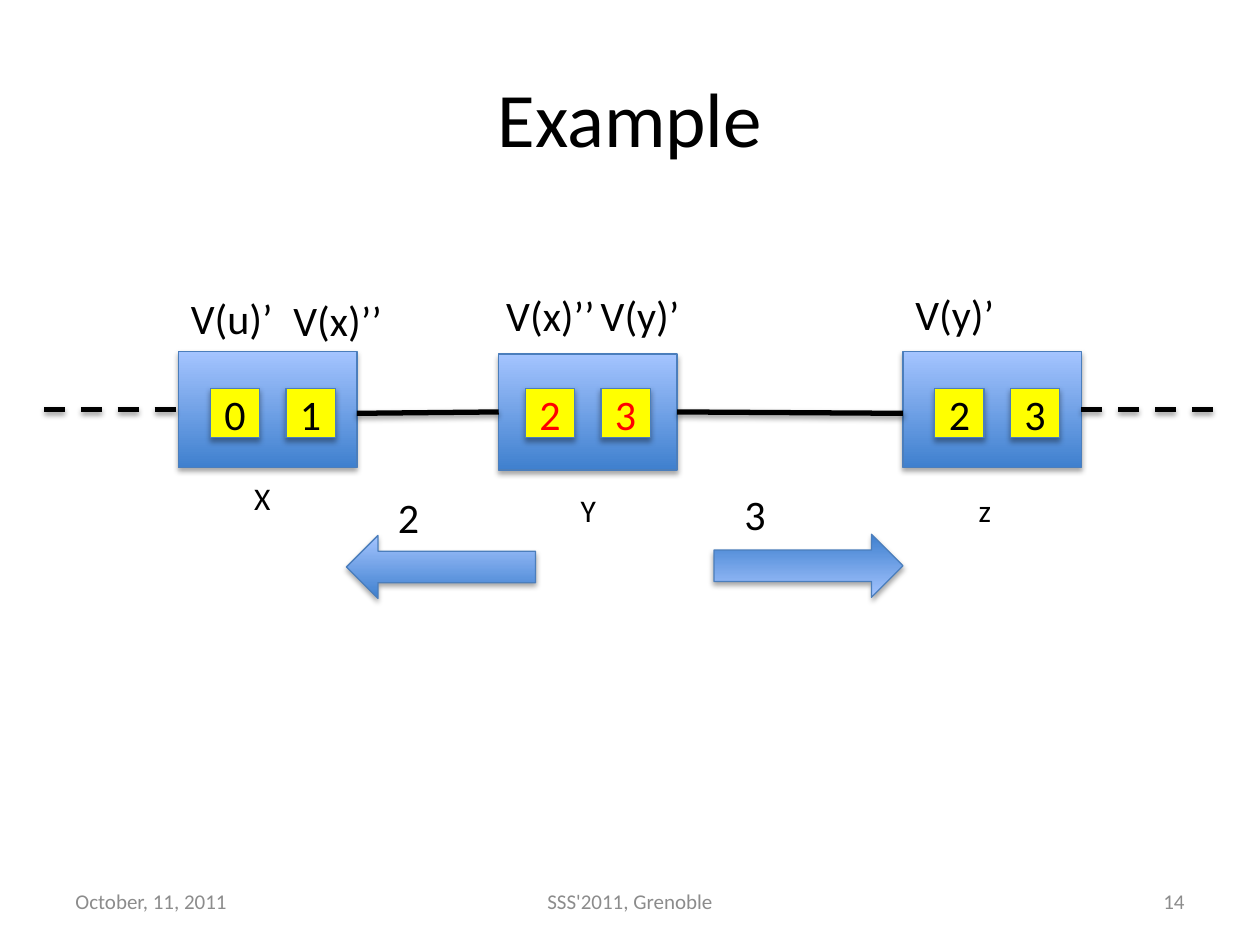
import dataclasses

import pptx
import pptx.dml.color
import pptx.enum.dml
import pptx.enum.shapes
import pptx.enum.text
import pptx.oxml.xmlchemy
import pptx.util

Pt = pptx.util.Pt
ALIGN = pptx.enum.text.PP_ALIGN
ANCHOR = pptx.enum.text.MSO_ANCHOR
KIND = pptx.enum.shapes.MSO_SHAPE
FONT = "Calibri"
BLACK, RED, GREY = "000000", "FF0000", "8C8C8C"
YELLOW, EDGE, DARK, LIGHT = "FFFF00", "4B7EBC", "3F80CE", "A4C4FF"
NODE_W, NODE_H = 102, 66.24
CELL, PITCH = 28.2, 43.2


@dataclasses.dataclass
class Node:
    left: float
    top: float
    cell_x: float
    values: str
    ink: str = BLACK


@dataclasses.dataclass
class Label:
    words: str
    left: float
    top: float
    width: float
    height: float = 36
    size: float = 24
    ink: str = BLACK
    wrap: bool = True
    align: ALIGN = ALIGN.LEFT
    anchor: ANCHOR = ANCHOR.TOP


@dataclasses.dataclass
class Link:
    x1: float
    y1: float
    x2: float
    y2: float
    dashed: bool = False


@dataclasses.dataclass
class Arrow:
    left: float
    top: float
    turn: float = 0


NODES = [
    Node(285, 202.3, 300.2, "23", RED),
    Node(102, 201, 120.2, "01"),
    Node(516, 201, 534.2, "23"),
]
LINKS = [
    Link(25.2, 234, 102, 234, True),
    Link(618, 234, 694.8, 234, True),
    Link(204, 236.2, 285, 235.4),
    Link(387, 235.4, 516, 236.2),
]
ARROWS = [Arrow(198, 306), Arrow(408, 305.3, 180)]
NAMES = [
    Label(words, left, top, width, 28.8, 18, wrap=False)
    for words, left, top, width in [
        ("X", 138.2, 270, 23.8), ("Y", 324.7, 277.2, 23.8), ("z", 552.2, 277.2, 21.6)]
]
VIEWS = [
    Label("V(y)’", 336.2, 162, 59.8, wrap=False),
    Label("V(x)’’", 282.2, 162, 65.5, wrap=False),
    Label("V(x)’’", 160.6, 164.9, 91.4),
    Label("V(y)’", 516, 161.3, 91.4),
    Label("V(u)’", 102, 163.4, 91.4),
    Label("2", 220.3, 277.2, 91.4),
    Label("3", 418.3, 275.8, 91.4),
]
FOOTERS = [
    Label(words, left, 500.4, width, 28.8, 12, GREY, True, align, ANCHOR.MIDDLE)
    for words, left, width, align in [
        ("October, 11, 2011", 36, 168, ALIGN.LEFT),
        ("SSS'2011, Grenoble", 246, 228, ALIGN.CENTER),
        ("14", 516, 168, ALIGN.RIGHT)]
]


def tint(code: str) -> pptx.dml.color.RGBColor:
    return pptx.dml.color.RGBColor.from_string(code)


def write(frame, words: str, size: float, ink: str, align: ALIGN, anchor: ANCHOR) -> None:
    frame.vertical_anchor = anchor
    para = frame.paragraphs[0]
    para.alignment = align
    run = para.add_run()
    run.text = words
    run.font.name = FONT
    run.font.size = Pt(size)
    run.font.color.rgb = tint(ink)


def shade(shape, dist: float, alpha: int) -> None:
    """Add a soft shadow that falls straight down."""
    make = pptx.oxml.xmlchemy.OxmlElement
    effect = make("a:effectLst")
    outer = make("a:outerShdw")
    outer.set("blurRad", str(Pt(3.1)))
    outer.set("dist", str(Pt(dist)))
    outer.set("dir", "5400000")
    outer.set("rotWithShape", "0")
    color = make("a:srgbClr")
    color.set("val", BLACK)
    clear = make("a:alpha")
    clear.set("val", str(alpha * 1000))
    color.append(clear)
    outer.append(color)
    effect.append(outer)
    shape._element.spPr.append(effect)


def add_block(slide, kind: KIND, left: float, top: float, width: float, height: float,
              fill: str = ""):
    """Draw a shadowed shape, with the blue gradient if no fill is given."""
    shape = slide.shapes.add_shape(kind, Pt(left), Pt(top), Pt(width), Pt(height))
    if fill:
        shape.fill.solid()
        shape.fill.fore_color.rgb = tint(fill)
    else:
        shape.fill.gradient()
        shape.fill.gradient_angle = 90
        for stop, code in zip(shape.fill.gradient_stops, (DARK, LIGHT)):
            stop.color.rgb = tint(code)
    shape.line.color.rgb = tint(EDGE)
    shape.line.width = Pt(0.75)
    shade(shape, 1.8, 35)
    return shape


def add_cells(slide, node: Node) -> None:
    for i, value in enumerate(node.values):
        cell = add_block(slide, KIND.RECTANGLE, node.cell_x + i * PITCH, 222,
                         CELL, CELL, YELLOW)
        write(cell.text_frame, value, 24, node.ink, ALIGN.CENTER, ANCHOR.MIDDLE)


def add_link(slide, link: Link) -> None:
    line = slide.shapes.add_connector(
        pptx.enum.shapes.MSO_CONNECTOR.STRAIGHT,
        Pt(link.x1), Pt(link.y1), Pt(link.x2), Pt(link.y2))
    line.line.color.rgb = tint(BLACK)
    line.line.width = Pt(3)
    if link.dashed:
        line.line.dash_style = pptx.enum.dml.MSO_LINE.DASH
    shade(line, 1.6, 38)


def add_label(slide, label: Label) -> None:
    box = slide.shapes.add_textbox(
        Pt(label.left), Pt(label.top), Pt(label.width), Pt(label.height))
    box.text_frame.word_wrap = label.wrap
    write(box.text_frame, label.words, label.size, label.ink, label.align, label.anchor)


def main() -> None:
    deck = pptx.Presentation()
    deck.slide_width, deck.slide_height = Pt(720), Pt(540)
    slide = deck.slides.add_slide(deck.slide_layouts[5])

    # Title
    title = slide.shapes.title
    title.left, title.top, title.width, title.height = Pt(36), Pt(21.6), Pt(648), Pt(90)
    write(title.text_frame, "Example", 44, BLACK, ALIGN.CENTER, ANCHOR.MIDDLE)

    # Nodes, then links, then the cells on top
    for node in NODES:
        add_block(slide, KIND.RECTANGLE, node.left, node.top, NODE_W, NODE_H)
    for link in LINKS:
        add_link(slide, link)
    for node in NODES:
        add_cells(slide, node)

    # Message arrows
    for arrow in ARROWS:
        shape = add_block(slide, KIND.LEFT_ARROW, arrow.left, arrow.top, 108, 36)
        shape.rotation = arrow.turn

    # Labels and footer
    for label in NAMES + VIEWS + FOOTERS:
        add_label(slide, label)

    deck.save("out.pptx")


if __name__ == "__main__":
    main()
